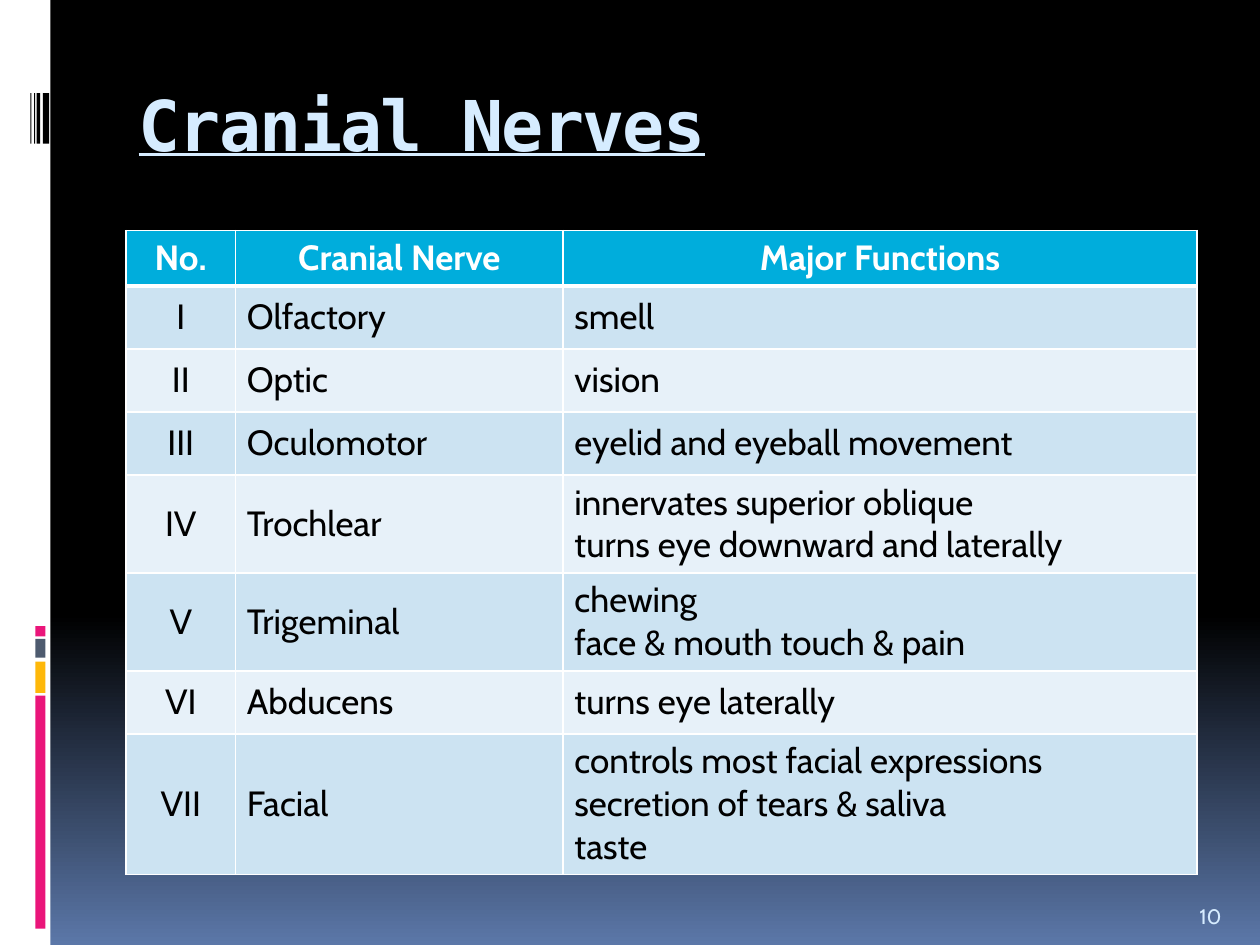
from lxml.etree import SubElement
from pptx import Presentation
from pptx.dml.color import RGBColor
from pptx.enum.shapes import MSO_SHAPE
from pptx.enum.text import MSO_ANCHOR, PP_ALIGN
from pptx.oxml.ns import qn
from pptx.util import Inches, Pt

BODY_FONT = "Cabin"
TITLE_FONT = "DejaVu Sans Mono"
PALE_BLUE = "D6ECFF"
WHITE, BLACK, PINK = "FFFFFF", "000000", "EA157A"
HEADER_FILL = "00ADDC"
BAND_FILLS = ["CCE3F2", "E7F1F9"]

COLUMN_WIDTHS = [0.87, 2.6, 5.03]
HEADER_HEIGHT, ROW_HEIGHT = 0.41, 0.5
NERVES = [
    ("No.", "Cranial Nerve", "Major Functions"),
    ("I", "Olfactory", "smell"),
    ("II", "Optic", "vision"),
    ("III", "Oculomotor", "eyelid and eyeball movement"),
    ("IV", "Trochlear", "innervates superior oblique\vturns eye downward and laterally"),
    ("V", "Trigeminal", "chewing\vface & mouth touch & pain"),
    ("VI", "Abducens", "turns eye laterally"),
    ("VII", "Facial",
     "controls most facial expressions\vsecretion of tears & saliva\vtaste"),
]


def color(value):
    return RGBColor.from_string(value)


def format_font(font, name, size, value, bold=False):
    font.name, font.size, font.bold = name, Pt(size), bold
    font.color.rgb = color(value)


def place(shape, left, top, width, height):
    shape.left, shape.top = Inches(left), Inches(top)
    shape.width, shape.height = Inches(width), Inches(height)


def paint_background(slide):
    # Black down to 65 %, then fading to blue at the bottom
    fill = slide.background.fill
    fill.gradient()
    fill.gradient_angle = 270
    for stop, position, value in zip(fill.gradient_stops, (0.65, 1), (BLACK, "5B77A8")):
        stop.position = position
        stop.color.rgb = color(value)


def add_bar(slide, left, top, width, height, value):
    bar = slide.shapes.add_shape(MSO_SHAPE.RECTANGLE, Inches(left), Inches(top),
                                 Inches(width), Inches(height))
    bar.shadow.inherit = False
    bar.fill.solid()
    bar.fill.fore_color.rgb = color(value)
    bar.line.fill.background()


def add_side_strip(slide, left, top, width, height):
    add_bar(slide, left, top, width, height, WHITE)
    # Coloured blocks near the bottom
    for offset, block_height, value in [(5.52, 1.85, PINK), (5.25, 0.25, "FEB80A"),
                                        (5.07, 0.15, "4E5B6F"), (4.97, 0.08, PINK)]:
        add_bar(slide, left + 0.28, top + offset, 0.08, block_height, value)
    # Black stripes beside the title
    for offset, stripe_width in [(0.34, 0.05), (0.29, 0.03), (0.27, 0.01), (0.24, 0.01)]:
        add_bar(slide, left + offset, top + 0.74, stripe_width, 0.4, BLACK)


def fill_title(slide, left, top, width, height):
    title = slide.shapes.title
    place(title, left, top, width, height)
    frame = title.text_frame
    frame.text = "Cranial Nerves"
    frame.vertical_anchor = MSO_ANCHOR.TOP
    frame.margin_top = Inches(0.09)
    paragraph = frame.paragraphs[0]
    paragraph.alignment = PP_ALIGN.LEFT
    run = paragraph.runs[0]
    format_font(run.font, TITLE_FONT, 40, PALE_BLUE, bold=True)
    run.font.underline = True
    # Letters one point closer
    run.font._element.set("spc", "-100")


def set_borders(cell, top_width, bottom_width):
    properties = cell._tc.get_or_add_tcPr()
    for side, width in [("L", 1), ("R", 1), ("T", top_width), ("B", bottom_width)]:
        line = SubElement(properties, qn(f"a:ln{side}"), w=str(Pt(width)))
        SubElement(SubElement(line, qn("a:solidFill")), qn("a:srgbClr"), val=WHITE)


def format_cell(cell, text, row, column):
    is_header = row == 0
    set_borders(cell, 3 if row == 1 else 1, 3 if is_header else 1)
    cell.fill.solid()
    cell.fill.fore_color.rgb = color(HEADER_FILL if is_header else BAND_FILLS[(row - 1) % 2])
    cell.vertical_anchor = MSO_ANCHOR.TOP if "\v" in text else MSO_ANCHOR.MIDDLE
    cell.margin_left = cell.margin_right = Inches(0.09)
    cell.text = text
    paragraph = cell.text_frame.paragraphs[0]
    paragraph.alignment = PP_ALIGN.CENTER if is_header or column == 0 else PP_ALIGN.LEFT
    for font in [paragraph.font] + [run.font for run in paragraph.runs]:
        format_font(font, BODY_FONT, 20, WHITE if is_header else BLACK, bold=is_header)


def add_nerve_table(slide, left, top, width, height):
    table = slide.shapes.add_table(len(NERVES), len(COLUMN_WIDTHS), Inches(left), Inches(top),
                                   Inches(width), Inches(height)).table
    for column, column_width in zip(table.columns, COLUMN_WIDTHS):
        column.width = Inches(column_width)
    for row, texts in enumerate(NERVES):
        table.rows[row].height = Inches(ROW_HEIGHT if row else HEADER_HEIGHT)
        for column, text in enumerate(texts):
            format_cell(table.cell(row, column), text, row, column)


def add_page_number(slide, left, top, width, height):
    box = slide.shapes.add_textbox(Inches(left), Inches(top), Inches(width), Inches(height))
    frame = box.text_frame
    frame.word_wrap = True
    frame.vertical_anchor = MSO_ANCHOR.BOTTOM
    frame.text = "10"
    format_font(frame.paragraphs[0].runs[0].font, BODY_FONT, 12, PALE_BLUE)


def main():
    presentation = Presentation()
    presentation.slide_width, presentation.slide_height = Inches(10), Inches(7.5)
    slide = presentation.slides.add_slide(presentation.slide_layouts[5])
    paint_background(slide)
    add_side_strip(slide, 0, 0, 0.4, 7.5)
    fill_title(slide, 1, 0.56, 8.5, 1)
    add_nerve_table(slide, 1, 1.83, sum(COLUMN_WIDTHS),
                    HEADER_HEIGHT + ROW_HEIGHT * (len(NERVES) - 1))
    add_page_number(slide, 9.42, 7.02, 0.5, 0.4)
    presentation.save("out.pptx")


if __name__ == "__main__":
    main()
